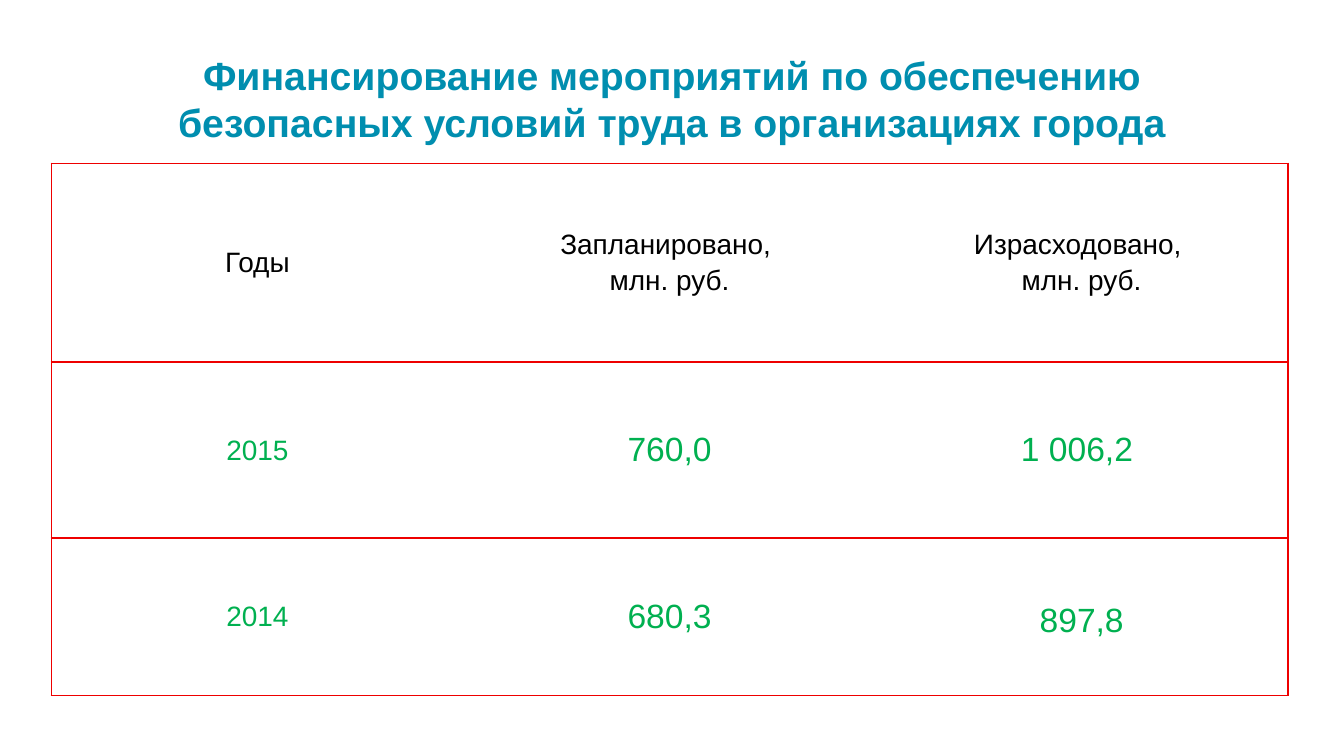
from lxml import etree
from pptx import Presentation
from pptx.dml.color import RGBColor
from pptx.enum.text import MSO_ANCHOR, PP_ALIGN
from pptx.oxml.ns import qn
from pptx.util import Pt

CENTER = PP_ALIGN.CENTER
MIDDLE = MSO_ANCHOR.MIDDLE
TEAL, BLACK, GREEN, RED, WHITE = "008EAF", "000000", "00B050", "EE0000", "FFFFFF"
ROW_HEIGHTS = [106.6, 94.3, 84.2]
COLUMN_WIDTH = 220.8
ROWS = [
    ["Годы", "Запланировано, \nмлн. руб.", "Израсходовано, \nмлн. руб."],
    ["2015", "760,0", "1 006,2 "],
    ["2014", "680,3", "897,8"],
]


def write_text(frame, text, size, color, bold=False, space_before=0):
    frame.word_wrap = True
    frame.text = text
    for paragraph in frame.paragraphs:
        paragraph.alignment = CENTER
        paragraph.space_before = Pt(space_before)
        font = paragraph.font
        for run in paragraph.runs:
            font = run.font
            font.name = "Arial"
            font.size = Pt(size)
            font.bold = bold
            font.color.rgb = RGBColor.from_string(color)


def set_borders(cell, visible_sides):
    """Draw red lines on the visible sides (L, R, T, B) and none on the others."""
    properties = cell._tc.get_or_add_tcPr()
    for index, side in enumerate("LRTB"):
        line = etree.Element(qn(f"a:ln{side}"), w=str(Pt(1)))
        if side in visible_sides:
            fill = etree.SubElement(line, qn("a:solidFill"))
            etree.SubElement(fill, qn("a:srgbClr"), val=RED)
        else:
            etree.SubElement(line, qn("a:noFill"))
        properties.insert(index, line)


presentation = Presentation()
presentation.slide_width = Pt(720)
presentation.slide_height = Pt(405)
slide = presentation.slides.add_slide(presentation.slide_layouts[6])

title = slide.shapes.add_textbox(Pt(53.5), Pt(24.5), Pt(613), Pt(56))
frame = title.text_frame
frame.margin_left = frame.margin_right = Pt(5)
frame.margin_top = frame.margin_bottom = Pt(3)
write_text(
    frame,
    "Финансирование мероприятий по обеспечению безопасных условий труда в организациях города",
    size=21, color=TEAL, bold=True,
)

table = slide.shapes.add_table(
    len(ROWS), len(ROWS[0]), Pt(27.5), Pt(87.5),
    Pt(COLUMN_WIDTH * len(ROWS[0])), Pt(sum(ROW_HEIGHTS)),
).table
table.first_row = table.horz_banding = False
for column in table.columns:
    column.width = Pt(COLUMN_WIDTH)

for row_index, (height, texts) in enumerate(zip(ROW_HEIGHTS, ROWS)):
    table.rows[row_index].height = Pt(height)
    for column_index, text in enumerate(texts):
        cell = table.cell(row_index, column_index)
        cell.vertical_anchor = MIDDLE
        cell.margin_left = cell.margin_right = Pt(5)
        cell.margin_top = cell.margin_bottom = Pt(3)
        cell.fill.solid()
        cell.fill.fore_color.rgb = RGBColor.from_string(WHITE)
        size = 18 if row_index and column_index else 15
        write_text(cell.text_frame, text, size=size,
                   color=GREEN if row_index else BLACK, space_before=size * 0.2)
        set_borders(cell, "TB" + {0: "L", 2: "R"}.get(column_index, ""))

# The last amount sits slightly below the middle of its row
table.cell(2, 2).margin_top = Pt(7)

presentation.save("out.pptx")
